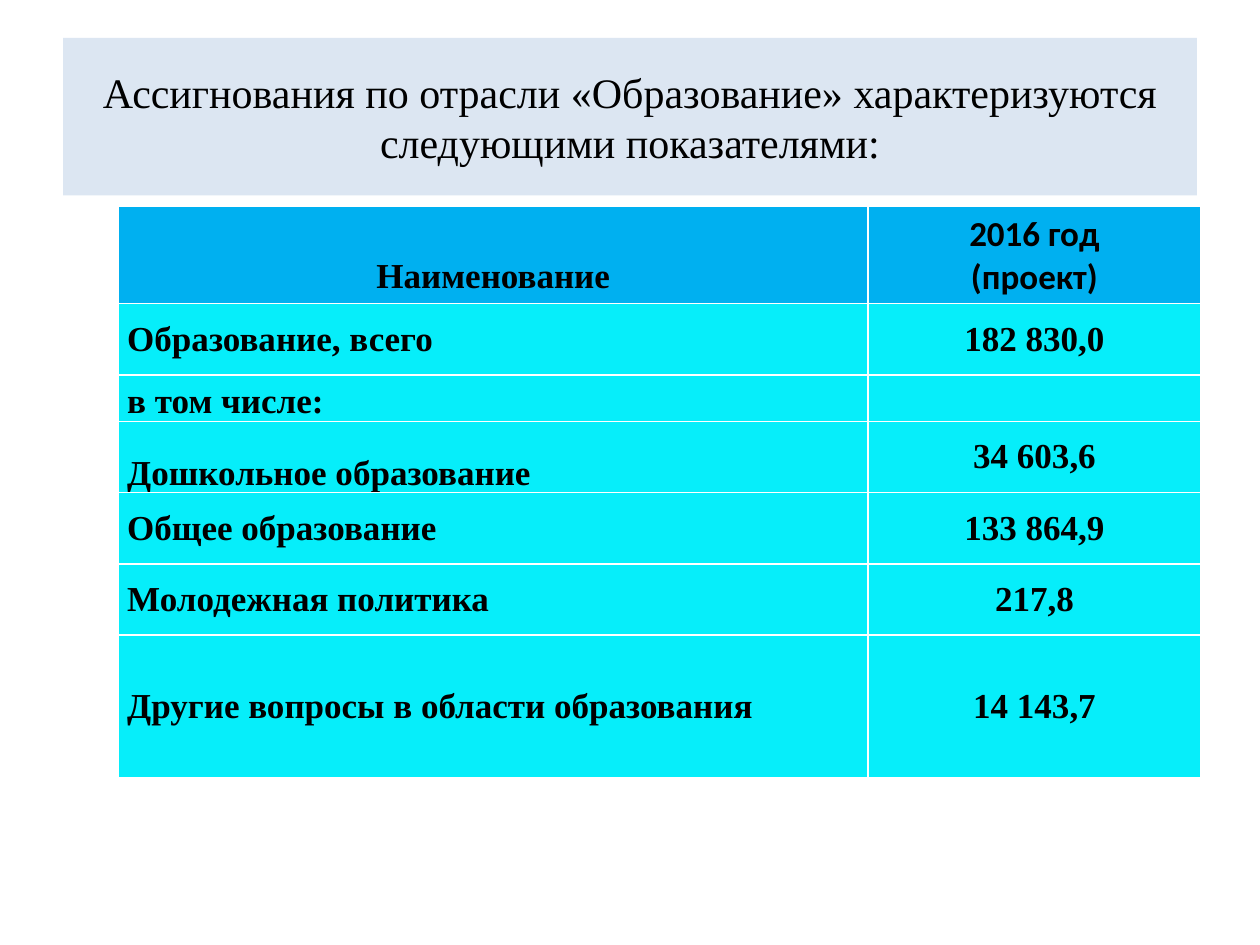
from dataclasses import dataclass

import pptx
import pptx.dml.color
import pptx.enum.text
import pptx.util

Inches = pptx.util.Inches
Align = pptx.enum.text.PP_ALIGN
Anchor = pptx.enum.text.MSO_ANCHOR

SERIF = "Times New Roman"
BLACK, TITLE_FILL = "000000", "DCE6F2"
HEADER_FILL, BODY_FILL = "00B0F0", "06EEFA"
COLUMN_WIDTHS = (5.95, 2.64)


@dataclass
class BudgetRow:
    name: str
    amount: str
    height: float = 0.565
    anchor: Anchor = Anchor.MIDDLE
    align: Align = Align.LEFT


BUDGET_ROWS = [
    BudgetRow("Образование, всего", "182 830,0"),
    BudgetRow("в том числе:", "", height=0.37, anchor=Anchor.BOTTOM),
    BudgetRow("Дошкольное образование", "34 603,6", anchor=Anchor.BOTTOM),
    BudgetRow("Общее образование", "133 864,9"),
    BudgetRow("Молодежная политика", "217,8"),
    BudgetRow("Другие вопросы в области образования", "14 143,7",
              height=1.13, align=Align.JUSTIFY),
]
HEADER_HEIGHT = 0.77


def set_fill(fill: pptx.dml.fill.FillFormat, color: str) -> None:
    fill.solid()
    fill.fore_color.rgb = pptx.dml.color.RGBColor.from_string(color)


def format_text(frame: pptx.text.text.TextFrame, size: float, align: Align,
                font: str = SERIF, bold: bool = False) -> None:
    for para in frame.paragraphs:
        para.alignment = align
        para.font.name = font
        para.font.size = pptx.util.Pt(size)
        para.font.bold = bold
        set_fill(para.font.fill, BLACK)


def write_cell(cell: pptx.table._Cell, text: str, fill: str, align: Align,
               anchor: Anchor = Anchor.MIDDLE, font: str = SERIF,
               side: float = 0.07, top: float = 0, bottom: float = 0) -> None:
    cell.text = text
    cell.vertical_anchor = anchor
    cell.margin_left = cell.margin_right = Inches(side)
    cell.margin_top, cell.margin_bottom = Inches(top), Inches(bottom)
    set_fill(cell.fill, fill)
    format_text(cell.text_frame, 20, align, font, bold=True)


def add_title(page: pptx.slide.Slide) -> None:
    title = page.shapes.title
    title.left, title.top = Inches(0.5), Inches(0.3)
    title.width, title.height = Inches(9), Inches(1.25)
    set_fill(title.fill, TITLE_FILL)
    title.text_frame.text = ("Ассигнования по отрасли «Образование» характеризуются "
                             "следующими показателями:")
    title.text_frame.vertical_anchor = Anchor.MIDDLE
    format_text(title.text_frame, 24, Align.CENTER)


def add_budget_table(page: pptx.slide.Slide) -> None:
    heights = [HEADER_HEIGHT] + [row.height for row in BUDGET_ROWS]
    table = page.shapes.add_table(
        len(heights), len(COLUMN_WIDTHS), Inches(0.94), Inches(1.64),
        Inches(sum(COLUMN_WIDTHS)), Inches(sum(heights))).table
    table.horz_banding = False
    for column, width in zip(table.columns, COLUMN_WIDTHS):
        column.width = Inches(width)
    for line, height in zip(table.rows, heights):
        line.height = Inches(height)

    write_cell(table.cell(0, 0), "Наименование", HEADER_FILL, Align.CENTER,
               Anchor.BOTTOM, side=0.01, bottom=0.06)
    write_cell(table.cell(0, 1), "2016 год\n(проект)", HEADER_FILL, Align.CENTER,
               Anchor.TOP, font="Calibri", side=0.1, top=0.05, bottom=0.04)
    for index, row in enumerate(BUDGET_ROWS, start=1):
        write_cell(table.cell(index, 0), row.name, BODY_FILL, row.align, row.anchor)
        write_cell(table.cell(index, 1), row.amount, BODY_FILL, Align.CENTER)


def main() -> None:
    deck = pptx.Presentation()
    deck.slide_width, deck.slide_height = Inches(10), Inches(7.5)
    page = deck.slides.add_slide(deck.slide_layouts[5])
    add_title(page)
    add_budget_table(page)
    deck.save("out.pptx")


if __name__ == "__main__":
    main()
